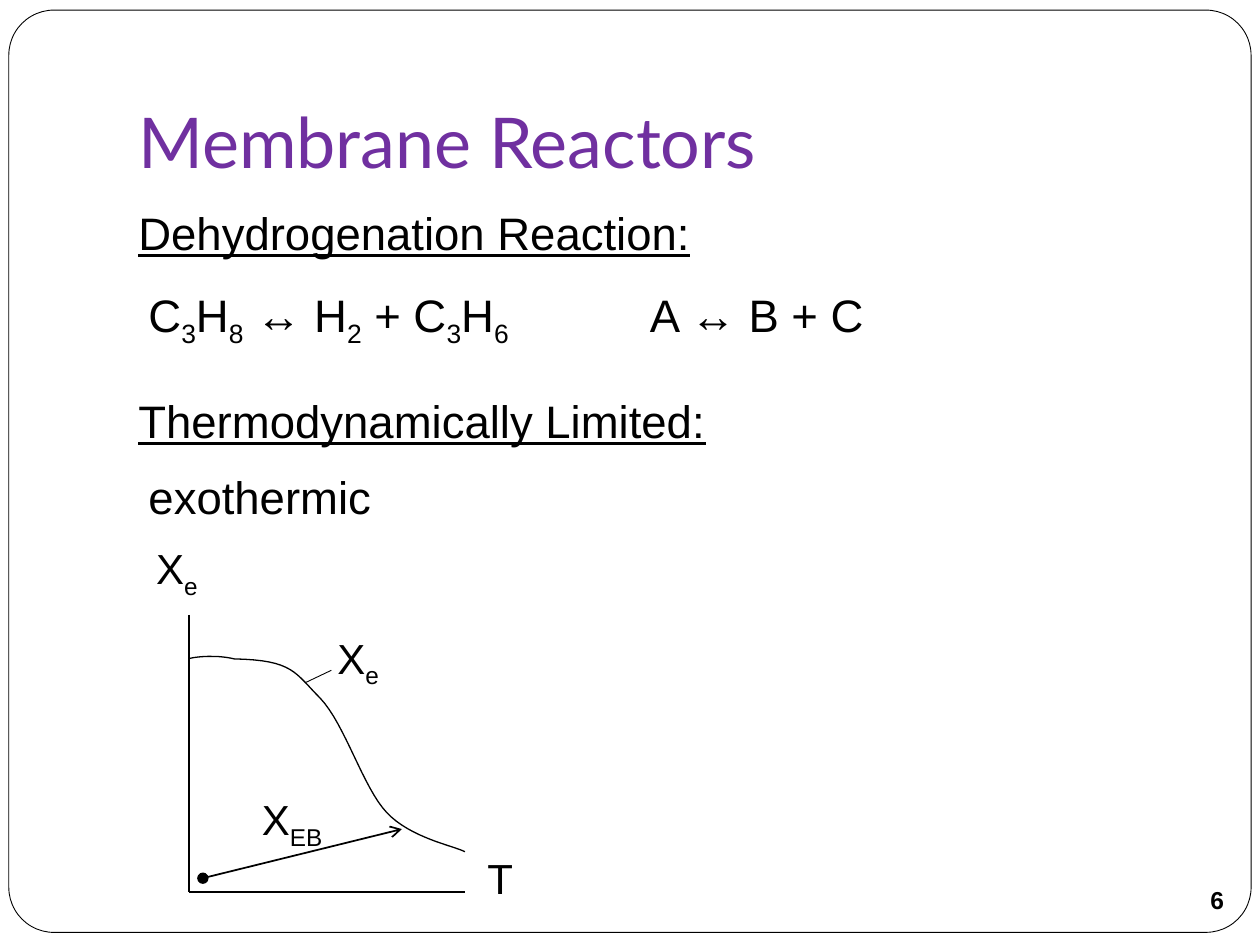
from lxml import etree
from pptx import Presentation
from pptx.dml.color import RGBColor
from pptx.enum.shapes import MSO_CONNECTOR, MSO_SHAPE
from pptx.enum.text import MSO_ANCHOR, MSO_AUTO_SIZE, PP_ALIGN
from pptx.oxml.ns import qn
from pptx.util import Inches, Pt

STRAIGHT = MSO_CONNECTOR.STRAIGHT
ROUND, OVAL = MSO_SHAPE.ROUNDED_RECTANGLE, MSO_SHAPE.OVAL
LEFT, CENTER = PP_ALIGN.LEFT, PP_ALIGN.CENTER
TOP, MIDDLE, BOTTOM = MSO_ANCHOR.TOP, MSO_ANCHOR.MIDDLE, MSO_ANCHOR.BOTTOM
BLACK, PURPLE = "000000", "7030A0"
hue = RGBColor.from_string

deck = Presentation()
deck.slide_width, deck.slide_height = Inches(10), Inches(7.5)
slide = deck.slides.add_slide(deck.slide_layouts[5])
shapes = slide.shapes


def write(text, x, y, w, h, box=None, size=26, font="Arial", color=BLACK,
          bold=False, line=False, align=LEFT, anchor=TOP, pad=0.1):
    """Set text in a box; every second part between bars is a subscript."""
    box = box or shapes.add_textbox(0, 0, 0, 0)
    box.left, box.top, box.width, box.height = map(Inches, (x, y, w, h))
    frame = box.text_frame
    frame.word_wrap, frame.auto_size = True, MSO_AUTO_SIZE.NONE
    frame.vertical_anchor = anchor
    frame.margin_left = frame.margin_right = Inches(pad)
    frame.margin_top = Inches(pad / 2)
    frame.margin_bottom = Inches(pad if anchor == BOTTOM else pad / 2)
    para = frame.paragraphs[0]
    para.alignment = align
    for i, part in enumerate(text.split("|")):
        run = para.add_run()
        run.text = part
        run.font.size, run.font.name = Pt(size), font
        run.font.bold, run.font.underline = bold, line
        run.font.color.rgb = hue(color)
        if i % 2:
            run.font._element.set("baseline", "-25000")
    return para


def ink(shape, width):
    """Give a shape or connector a plain black line and no shadow."""
    shape.line.color.rgb = hue(BLACK)
    shape.line.width = Pt(width)
    etree.SubElement(shape._element.spPr, qn("a:effectLst"))


# Frame, behind everything else
frame = shapes.add_shape(ROUND, *map(Inches, (0.07, 0.08, 9.86, 7.32)))
frame.adjustments[0] = 0.049
frame.fill.solid()
frame.fill.fore_color.rgb = hue("FFFFFF")
ink(frame, 0.5)
shapes._spTree.insert(2, frame._element)

# Title and page number
write("Membrane Reactors", 1, 0.3, 8.5, 1.25, box=shapes.title, size=40,
      font="Lato", color=PURPLE, anchor=BOTTOM)
write("6", 9.41, 6.89, 0.5, 0.5, size=14, bold=True, align=CENTER,
      anchor=MIDDLE, pad=0)

# Headings and their lines
for text, y in (("Dehydrogenation Reaction:", 1.58),
                ("Thermodynamically Limited:", 3.07)):
    write(text, 1, y, 5, 0.54, line=True)
write("exothermic", 1.08, 3.67, 2.29, 0.54)
para = write("C|3|H|8| ↔ H|2| + C|3|H|6|\tA ↔ B + C", 1.08, 2.23, 6.2, 0.54)
tabs = etree.SubElement(para._p.get_or_add_pPr(), qn("a:tabLst"))
etree.SubElement(tabs, qn("a:tab"), pos=str(Inches(3.98)), algn="l")

# Graph labels
for text, x, y in (("X|e", 1.14, 4.26), ("X|e", 2.58, 4.97),
                   ("X|EB", 1.98, 6.25), ("T", 3.77, 6.72)):
    write(text, x, y, 0.72, 0.5, size=24)

# Axes, pointer to the curve, energy balance line
for x1, y1, x2, y2, width in ((1.5, 4.88, 1.5, 7.08, 0.75),
                              (1.5, 7.08, 3.69, 7.08, 0.75),
                              (2.42, 5.42, 2.63, 5.32, 0.5),
                              (1.61, 6.97, 3.19, 6.58, 1)):
    rule = shapes.add_connector(STRAIGHT, *map(Inches, (x1, y1, x2, y2)))
    ink(rule, width)
etree.SubElement(rule.line._get_or_add_ln(), qn("a:tailEnd"), type="arrow")

# Start of the energy balance line
dot = shapes.add_shape(OVAL, *map(Inches, (1.57, 6.93, 0.08, 0.08)))
dot.fill.solid()
dot.fill.fore_color.rgb = hue(BLACK)
ink(dot, 0.75)

# Equilibrium curve: cubic arcs, each from the end of the last
knots = [(1.5, 5.23), (1.5, 5.22), (1.7, 5.19), (1.86, 5.23),
         (2.33, 5.24), (2.34, 5.34), (2.54, 5.54),
         (2.74, 5.75), (2.88, 6.25), (3.07, 6.45),
         (3.26, 6.65), (3.59, 6.71), (3.69, 6.76)]
steps = 16
points = []
for k in range(0, len(knots) - 1, 3):
    for n in range(steps + 1):
        t = n / steps
        u = 1 - t
        share = (u ** 3, 3 * u * u * t, 3 * u * t * t, t ** 3)
        points.append([Inches(sum(s * knot[axis] for s, knot in
                                  zip(share, knots[k:k + 4])))
                       for axis in (0, 1)])
# The pen rounds to whole units, so its points are in EMU
pen = shapes.build_freeform(*points[0], scale=1)
pen.add_line_segments(points[1:], close=False)
curve = pen.convert_to_shape()
curve.fill.background()
ink(curve, 0.75)

deck.save("out.pptx")
